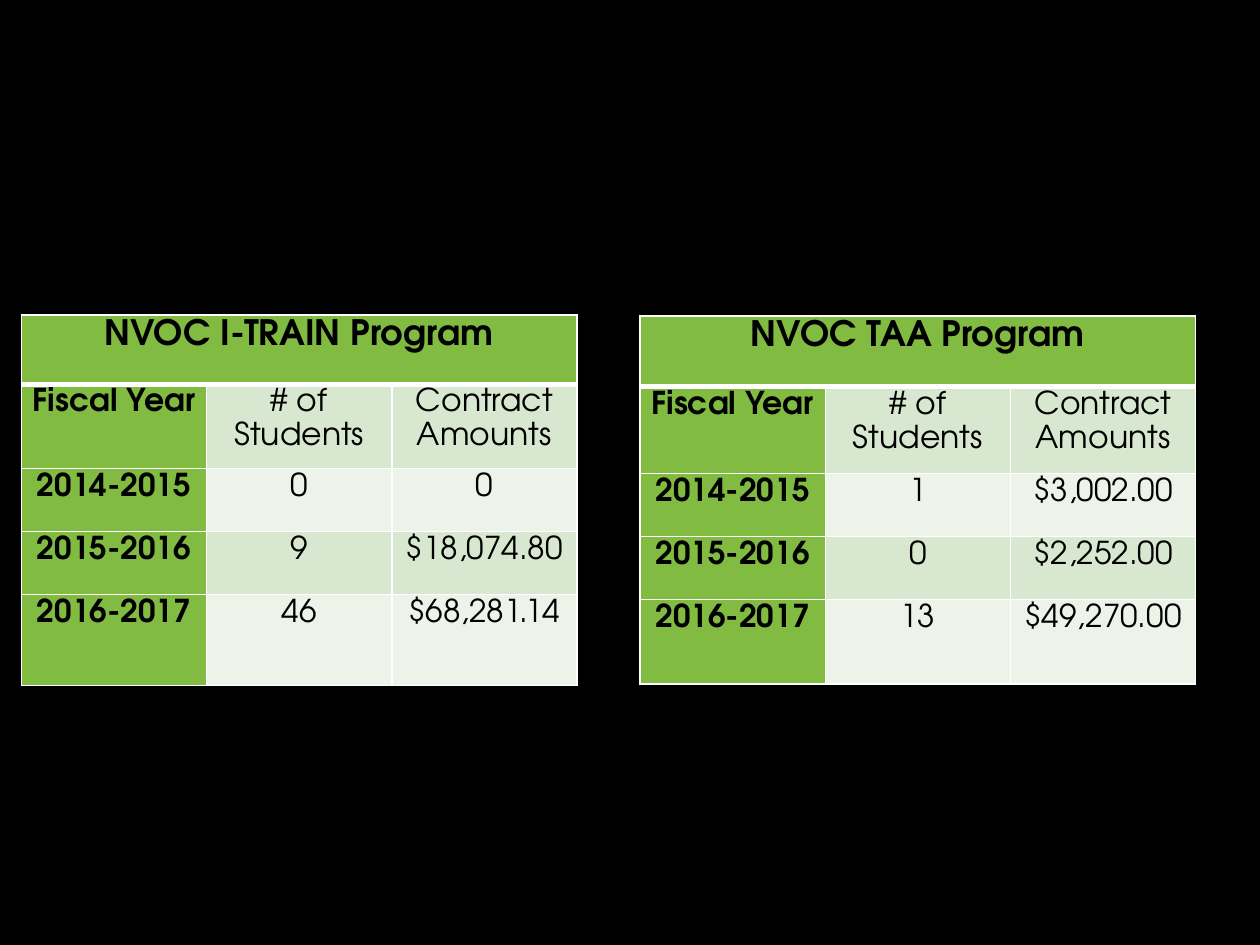
from pptx import Presentation
from pptx import util as u
from pptx.dml.color import RGBColor
from pptx.enum import text
from pptx.oxml import parse_xml
from pptx.oxml.ns import nsdecls

BLACK = RGBColor(0x00, 0x00, 0x00)
WHITE = RGBColor(0xFF, 0xFF, 0xFF)
GREEN = RGBColor(0x81, 0xBB, 0x42)
BANDS = [RGBColor(0xD8, 0xE7, 0xCF), RGBColor(0xED, 0xF3, 0xE9)]
FONT = "TeX Gyre Adventor"
COLS, COL_W = 3, 1.47
HEADINGS = ("Fiscal Year", "# of Students", "Contract Amounts")

PROGRAMS = [
    {
        "title": "NVOC I-TRAIN Program",
        "at": (0.17, 2.5),
        "heights": (0.55, 0.67, 0.5, 0.5, 0.72),
        "rows": [
            ("2014-2015", "0", "0"),
            ("2015-2016", "9", "$18,074.80"),
            ("2016-2017", "46", "$68,281.14"),
        ],
    },
    {
        "title": "NVOC TAA Program",
        "at": (5.08, 2.51),
        "heights": (0.56, 0.69, 0.5, 0.5, 0.67),
        "rows": [
            ("2014-2015", "1", "$3,002.00"),
            ("2015-2016", "0", "$2,252.00"),
            ("2016-2017", "13", "$49,270.00"),
        ],
    },
]


def set_borders(cell, row):
    widths = {"L": 1, "R": 1, "T": 3 if row == 1 else 1, "B": 3 if row == 0 else 1}
    tcPr = cell._tc.get_or_add_tcPr()
    for i, (side, width) in enumerate(widths.items()):
        tcPr.insert(i, parse_xml(
            f'<a:ln{side} {nsdecls("a")} w="{u.Pt(width)}"><a:solidFill>'
            f'<a:srgbClr val="{WHITE}"/></a:solidFill></a:ln{side}>'))


def fill_cell(cell, words, row, col):
    cell.fill.solid()
    strong = row == 0 or col == 0
    cell.fill.fore_color.rgb = GREEN if strong else BANDS[(row - 1) % 2]
    margins = {"margin_left": 0.07, "margin_right": 0.07, "margin_top": 0, "margin_bottom": 0}
    for name, value in margins.items():
        setattr(cell, name, u.Inches(value))
    set_borders(cell, row)
    if not words:
        return
    p = cell.text_frame.paragraphs[0]
    p.alignment, p.line_spacing = text.PP_ALIGN.CENTER, 1.15
    r = p.add_run()
    r.text = words
    style = {"name": FONT, "size": u.Pt(20 if row == 0 else 18), "bold": strong}
    for name, value in style.items():
        setattr(r.font, name, value)
    r.font.color.rgb = BLACK


def add_program(s, program):
    rows = [(program["title"], "", ""), HEADINGS, *program["rows"]]
    heights = program["heights"]
    box = (*program["at"], COLS * COL_W, sum(heights))
    table = s.shapes.add_table(len(rows), COLS, *map(u.Inches, box)).table
    for column in table.columns:
        column.width = u.Inches(COL_W)
    for row, height in zip(table.rows, heights):
        row.height = u.Inches(height)
    for i, values in enumerate(rows):
        for j, words in enumerate(values):
            fill_cell(table.cell(i, j), words, i, j)
    table.cell(0, 0).merge(table.cell(0, COLS - 1))


def main():
    prs = Presentation()
    prs.slide_width, prs.slide_height = u.Inches(10), u.Inches(7.5)
    s = prs.slides.add_slide(prs.slide_layouts[6])
    s.background.fill.solid()
    s.background.fill.fore_color.rgb = BLACK
    for program in PROGRAMS:
        add_program(s, program)
    prs.save("out.pptx")


if __name__ == "__main__":
    main()
